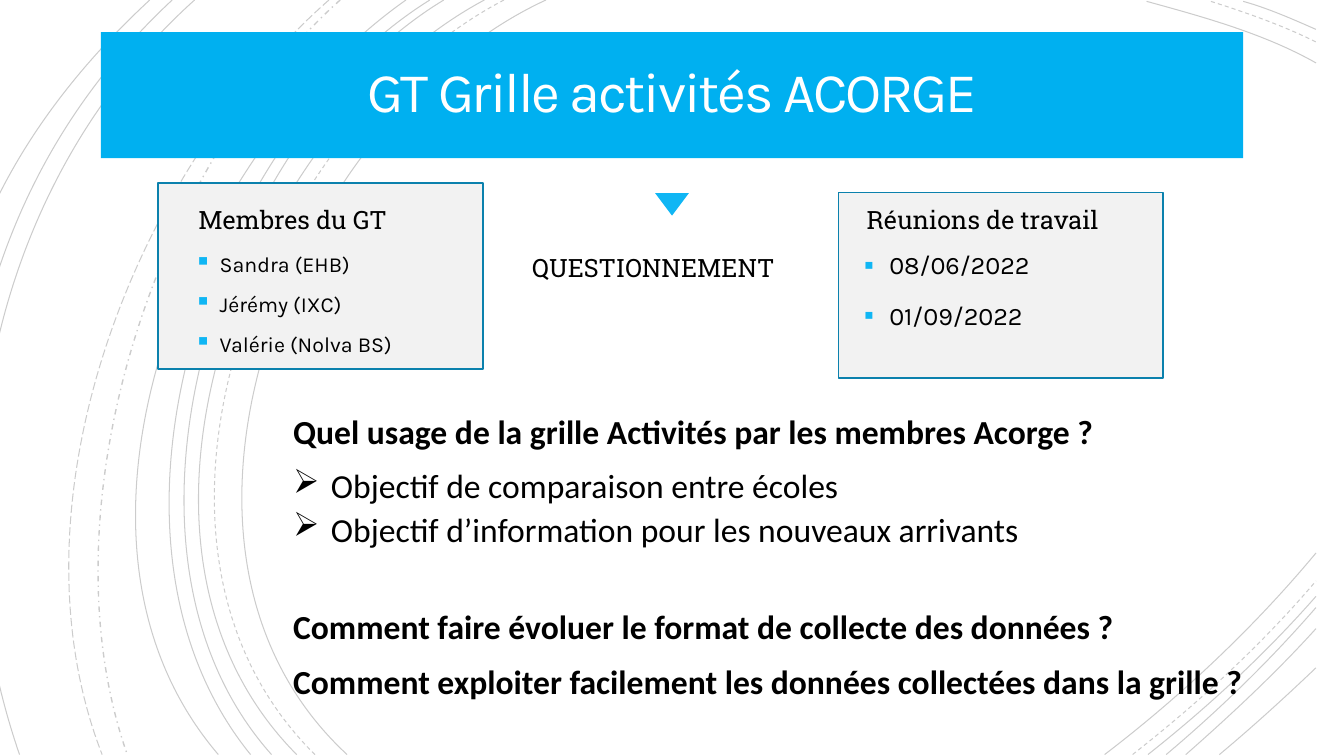
from lxml import etree
from pptx import Presentation
from pptx.dml.color import RGBColor
from pptx.enum import dml, shapes, text
from pptx.oxml.ns import qn
from pptx.util import Pt

BLACK = RGBColor(0x00, 0x00, 0x00)
WHITE = RGBColor(0xFF, 0xFF, 0xFF)
TITLE_BLUE = RGBColor(0x00, 0xB0, 0xF0)
ACCENT = RGBColor(0x10, 0xB6, 0xF4)
CARD_FILL = RGBColor(0xF2, 0xF2, 0xF2)
CARD_LINE = RGBColor(0x0B, 0x81, 0xAD)

SOLID = dml.MSO_LINE.SOLID
DASH = dml.MSO_LINE.DASH
LONG_DASH = dml.MSO_LINE.LONG_DASH
DASH_DOT = dml.MSO_LINE.DASH_DOT

BOTTOM = 539
RIGHT = 940
LEFT_ARCS = [
    (390, 210, 83, 86, 389, 248, SOLID),
    (360, 187, 90, 71, 387, 225, DASH),
    (346, 176, 91, 61, 387, 212, SOLID),
    (317, 158, 96, 61, 390, 194, SOLID),
    (307, 148, 99, 53, 384, 179, SOLID),
    (290, 139, 106, 21, 381, 156, SOLID),
    (243, 109, 120, 30, 366, 91, DASH_DOT),
    (235, 96, 122, 3, 359, 73, LONG_DASH),
    (139, -9, 133, -50, 353, 14, SOLID),
]
CORNER_ARCS = [
    (123, 49, 69, 3, 154, 253),
    (107, 53, 50, 9, 108, 176),
]
TOP_RIGHT_ARCS = [
    (819, 859, 12, 903, 24, 45, SOLID),
    (865, 890, 9, 916, 18, 30, DASH),
    (888, 906, 6, 924, 14, 21, SOLID),
]
BOTTOM_RIGHT_ARCS = [
    (789, 844, 497, 896, 448, 395, SOLID),
    (809, 855, 503, 901, 461, 415, DASH),
    (820, 863, 505, 904, 467, 426, SOLID),
    (833, 871, 507, 907, 472, 434, SOLID),
    (847, 880, 510, 912, 480, 449, SOLID),
    (871, 895, 519, 918, 498, 477, SOLID),
]

MEMBERS = ["Sandra (EHB)", "Jérémy (IXC)", "Valérie (Nolva BS)"]
MEETINGS = ["08/06/2022", "01/09/2022"]
GOALS = [
    ("Objectif de comparaison entre écoles", 0),
    ("Objectif d’information pour les nouveaux arrivants", 39),
]


def add_arc(s, start, control_1, control_2, end, dash=SOLID):
    fb = s.shapes.build_freeform(*start, scale=12700)
    fb.add_line_segments([control_1, control_2, end], close=False)
    sp = fb.convert_to_shape()
    sp.shadow.inherit = False
    sp.fill.background()
    sp.line.width = Pt(1 if dash == DASH_DOT else 0.75)
    sp.line.color.rgb = BLACK
    sp.line.dash_style = dash
    color = sp.line._ln.find(".//" + qn("a:srgbClr"))
    etree.SubElement(color, qn("a:alpha"), val="20000")
    outline = sp._element.find(".//" + qn("a:path"))
    curve = etree.SubElement(outline, qn("a:cubicBezTo"))
    for segment in outline.findall(qn("a:lnTo")):
        curve.append(segment[0])
        outline.remove(segment)


def add_arcs(s):
    for x0, ax, ay, bx, by, x1, dash in LEFT_ARCS:
        add_arc(s, (x0, 0), (ax, ay), (bx, by), (x1, BOTTOM), dash)
    for x0, ax, ay, bx, by, y1 in CORNER_ARCS:
        add_arc(s, (x0, 0), (ax, ay), (bx, by), (-17, y1))
    for start_y, arcs in ((1, TOP_RIGHT_ARCS), (BOTTOM, BOTTOM_RIGHT_ARCS)):
        for x0, ax, ay, bx, by, y1, dash in arcs:
            add_arc(s, (x0, start_y), (ax, ay), (bx, by), (RIGHT, y1), dash)


def add_box(s, kind, left, top, width, height, fill, line=None):
    sp = s.shapes.add_shape(kind, Pt(left), Pt(top), Pt(width), Pt(height))
    sp.shadow.inherit = False
    sp.fill.solid()
    sp.fill.fore_color.rgb = fill
    if line is None:
        sp.line.fill.background()
    else:
        sp.line.color.rgb = line
        sp.line.width = Pt(1.25)
    return sp


def add_text_box(s, left, top, width, height, anchor=text.MSO_ANCHOR.TOP):
    sp = s.shapes.add_textbox(Pt(left), Pt(top), Pt(width), Pt(height))
    tf = sp.text_frame
    tf.word_wrap = True
    tf.vertical_anchor = anchor
    return tf


def place(s, sp, left, top, width, height):
    sp.left, sp.top, sp.width, sp.height = Pt(left), Pt(top), Pt(width), Pt(height)
    s.shapes._spTree.append(sp._element)
    tf = sp.text_frame
    tf.word_wrap = True
    tf.auto_size = text.MSO_AUTO_SIZE.NONE
    tf.vertical_anchor = text.MSO_ANCHOR.MIDDLE
    return tf


def add_bullet(p, char, indent, color=None, size=None):
    pPr = p._p.get_or_add_pPr()
    pPr.set("marL", str(Pt(indent)))
    pPr.set("indent", str(-Pt(indent)))
    if color is not None:
        clr = etree.SubElement(pPr, qn("a:buClr"))
        etree.SubElement(clr, qn("a:srgbClr"), val=str(color))
    if size is not None:
        etree.SubElement(pPr, qn("a:buSzPct"), val=str(size * 1000))
    etree.SubElement(pPr, qn("a:buChar"), char=char)


def write(tf, words, font="Karla", size=18, color=BLACK, bold=False, align=None,
          spacing=1.0, before=0, after=0, tracking=None):
    p = tf.paragraphs[0]
    if p.runs:
        p = tf.add_paragraph()
    p.alignment = align
    p.line_spacing = spacing
    p.space_before, p.space_after = Pt(before), Pt(after)
    r = p.add_run()
    r.text = words
    r.font.name, r.font.size, r.font.bold = font, Pt(size), bold
    r.font.color.rgb = color
    if tracking is not None:
        r._r.get_or_add_rPr().set("spc", str(int(tracking * 100)))
    return p


def write_list(tf, items, **fmt):
    for item in items:
        add_bullet(write(tf, item, before=10, **fmt), "▪", 18, ACCENT, 110)


def write_title(s):
    sp = s.shapes.title
    sp.fill.solid()
    sp.fill.fore_color.rgb = TITLE_BLUE
    tf = place(s, sp, 72, 23, 816, 90)
    tf.margin_left = tf.margin_right = tf.margin_top = tf.margin_bottom = Pt(18)
    write(tf, "GT Grille activités ACORGE", size=40, color=WHITE,
          align=text.PP_ALIGN.CENTER, spacing=0.85, tracking=-1.5)


def write_questions(s):
    tf = add_text_box(s, 202.3, 288, 716, 217)
    fmt = dict(font="Calibri", size=24, spacing=1.07)
    write(tf, "Quel usage de la grille Activités par les membres Acorge ?",
          bold=True, after=8, **fmt)
    for goal, after in GOALS:
        add_bullet(write(tf, goal, after=after, **fmt), "➢", 27)
    for question in ("Comment faire évoluer le format de collecte des données ?",
                     "Comment exploiter facilement les données collectées dans la grille ?"):
        write(tf, question, bold=True, after=8, **fmt)


def main():
    prs = Presentation()
    prs.slide_width, prs.slide_height = Pt(960), Pt(540)
    s = prs.slides.add_slide(prs.slide_layouts[1])
    add_arcs(s)
    triangle = add_box(s, shapes.MSO_SHAPE.ISOSCELES_TRIANGLE, 468, 138, 24, 16, ACCENT)
    triangle.rotation = 180
    for left, top in ((599, 137.5), (113, 131)):
        add_box(s, shapes.MSO_SHAPE.RECTANGLE, left, top, 232, 132.5, CARD_FILL, CARD_LINE)
    write_title(s)
    meetings = place(s, s.placeholders[1], 610, 145.5, 308, 119)
    write_list(meetings, MEETINGS, spacing=1.2)
    members = add_text_box(s, 131.8, 174.2, 194, 86, text.MSO_ANCHOR.MIDDLE)
    write_list(members, MEMBERS, size=15.3)
    for words, left, top, width in (("Membres du GT", 134.6, 142.6, 219),
                                    ("Réunions de travail", 612, 142.6, 219),
                                    ("QUESTIONNEMENT", 373, 176.4, 298)):
        write(add_text_box(s, left, top, width, 29), words, font="Roboto Slab")
    write_questions(s)
    prs.save("out.pptx")


if __name__ == "__main__":
    main()
